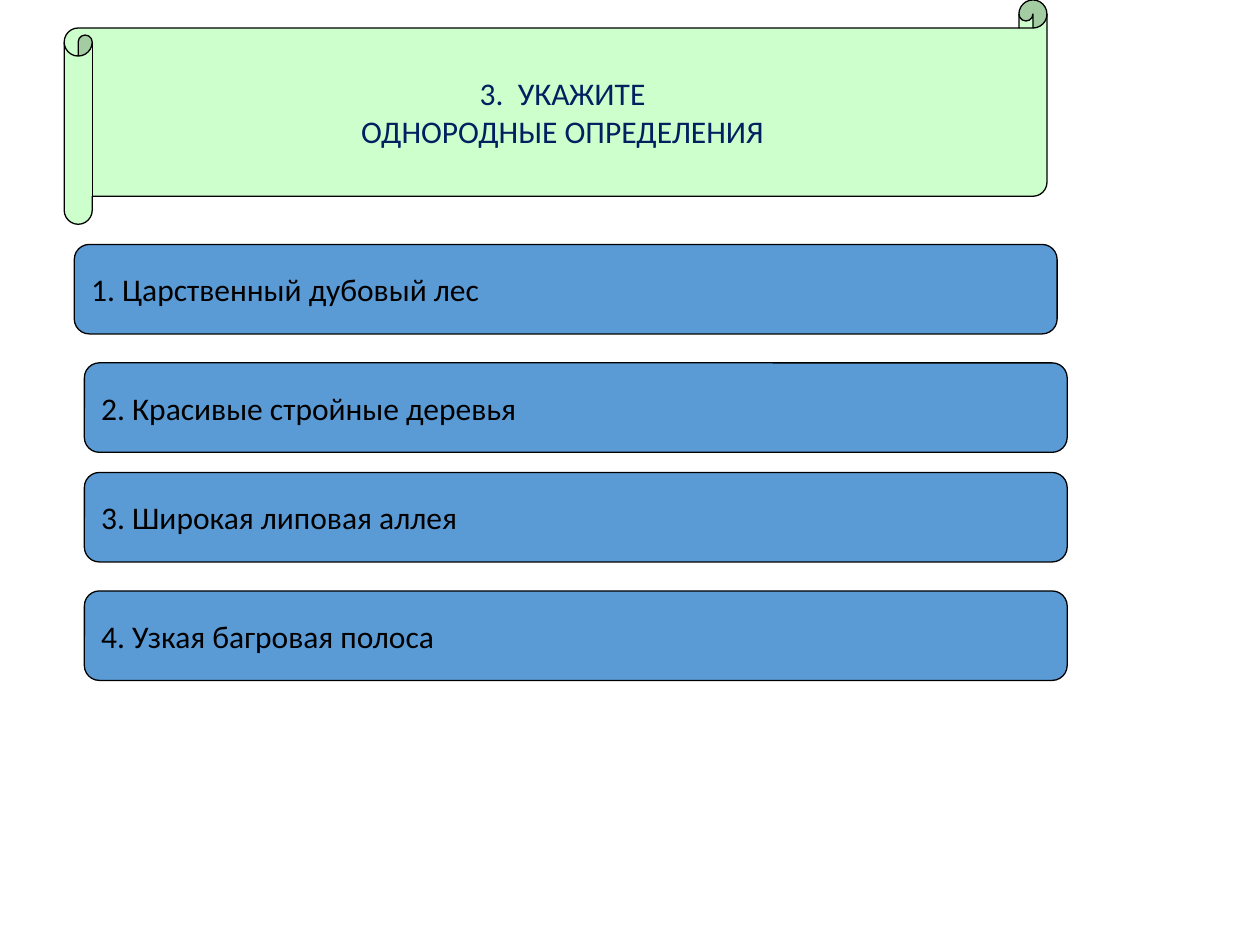
from pptx import Presentation
from pptx.dml.color import RGBColor
from pptx.enum.shapes import MSO_SHAPE
from pptx.enum.text import MSO_ANCHOR, PP_ALIGN
from pptx.util import Inches, Pt

WIDE, HIGH = Inches(10), Inches(7.5)
COL, ROW = WIDE / 100, HIGH / 75
SPAN = 78
TOP, STEP, PAIR = 19.4, 9.4, 18.1
MINT = RGBColor(0xCC, 0xFF, 0xCC)
BLUE = RGBColor(0x5B, 0x9B, 0xD5)
NAVY = RGBColor(0x00, 0x20, 0x60)
BLACK = RGBColor(0, 0, 0)

TITLE = ["3.  УКАЖИТЕ", "ОДНОРОДНЫЕ ОПРЕДЕЛЕНИЯ"]
ANSWERS = [
    "1. Царственный дубовый лес",
    "2. Красивые стройные деревья",
    "3. Широкая липовая аллея",
    "4. Узкая багровая полоса",
]


def add_panel(slide, kind, col, row, rows, fill, lines, ink, align):
    """Add an outlined shape with text, placed in grid columns and rows."""
    panel = slide.shapes.add_shape(
        kind, round(col * COL), round(row * ROW), round(SPAN * COL), round(rows * ROW)
    )
    panel.shadow.inherit = False
    panel.fill.solid()
    panel.fill.fore_color.rgb = fill
    panel.line.color.rgb = BLACK
    panel.line.width = Pt(0.75)
    frame = panel.text_frame
    frame.word_wrap = False
    frame.vertical_anchor = MSO_ANCHOR.MIDDLE
    frame.text = "\n".join(lines)
    for para in frame.paragraphs:
        para.alignment = align
        para.font.name = "Calibri"
        para.font.size = Pt(18)
        para.font.color.rgb = ink
    return panel


def add_title(slide):
    """Add the scroll with the task, its lines on a hanging indent."""
    scroll = add_panel(slide, MSO_SHAPE.HORIZONTAL_SCROLL, 5.1, 0, 17.8,
                       MINT, TITLE, NAVY, PP_ALIGN.CENTER)
    for para in scroll.text_frame.paragraphs:
        props = para._p.get_or_add_pPr()
        props.set("marL", str(Inches(0.38)))
        props.set("indent", str(-Inches(0.38)))


def add_answers(slide):
    """Add the answer bars, spaced in pairs."""
    for index, answer in enumerate(ANSWERS):
        pair, place = divmod(index, 2)
        col = 6.7 if index else 5.9
        add_panel(slide, MSO_SHAPE.ROUNDED_RECTANGLE, col,
                  TOP + pair * PAIR + place * STEP, 7.1,
                  BLUE, [answer], BLACK, PP_ALIGN.LEFT)


def main():
    """Build the quiz slide and save it."""
    deck = Presentation()
    deck.slide_width, deck.slide_height = WIDE, HIGH
    slide = deck.slides.add_slide(deck.slide_layouts[6])
    add_title(slide)
    add_answers(slide)
    deck.save("out.pptx")


if __name__ == "__main__":
    main()
